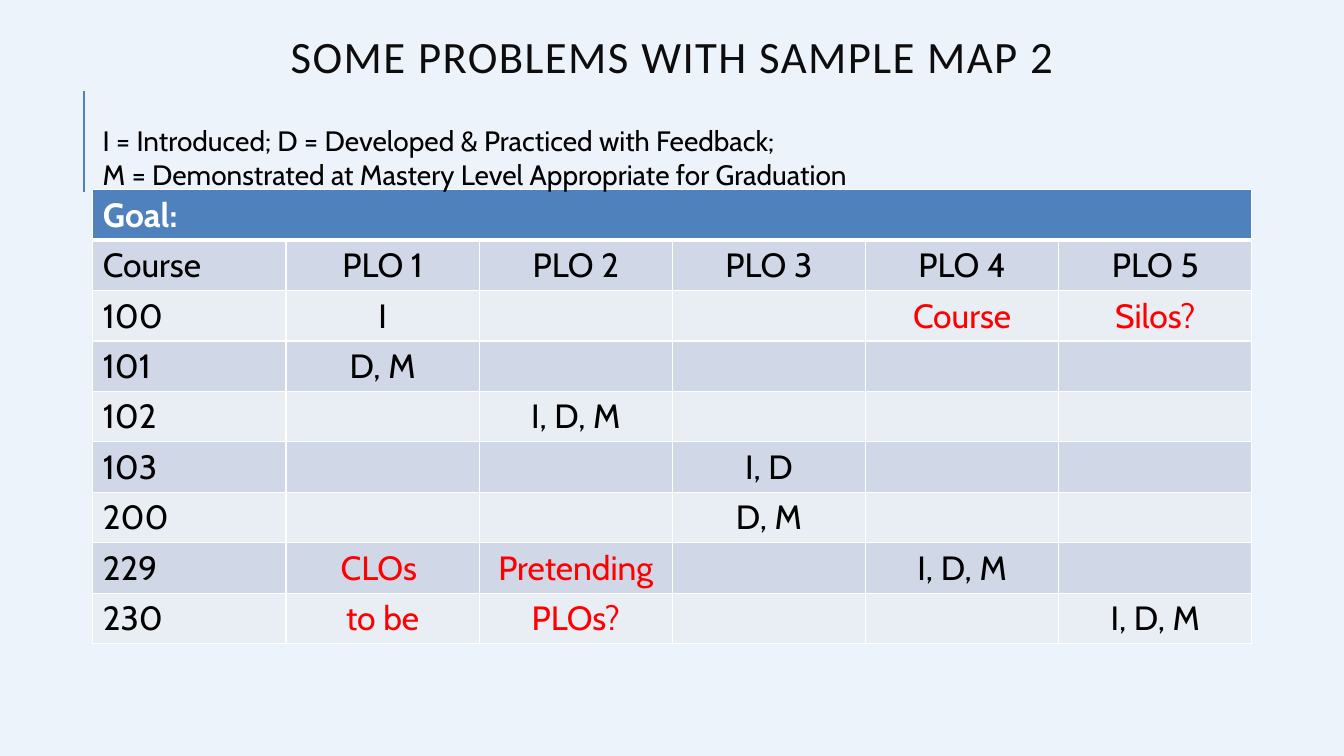
"""Build a slide with a curriculum map that shows sample problems."""
from lxml import etree
from pptx import Presentation
from pptx import util as u
from pptx.dml.color import RGBColor
from pptx.enum import shapes, text
from pptx.oxml import ns

PALE = RGBColor(0xED, 0xF3, 0xFB)
BLUE = RGBColor(0x4F, 0x81, 0xBD)
BAND = RGBColor(0xD0, 0xD8, 0xE8)
LIGHT = RGBColor(0xE9, 0xED, 0xF4)
WHITE = RGBColor(0xFF, 0xFF, 0xFF)
BLACK = RGBColor(0x00, 0x00, 0x00)
INK = RGBColor(0x0D, 0x0D, 0x0D)
RED = RGBColor(0xFF, 0x00, 0x00)

LEFT, WIDTH = 2.34, 29.21
NOTES = {"Course", "Silos?", "CLOs ", "Pretending", "to be", "PLOs?"}
ROWS = [
    ["Goal:", "", "", "", "", ""],
    ["Course", "PLO 1", "PLO 2", "PLO 3", "PLO 4", "PLO 5"],
    ["100", "I", "", "", "Course", "Silos?"],
    ["101", "D, M", "", "", "", ""],
    ["102", "", "I, D, M", "", "", ""],
    ["103", "", "", "I, D", "", ""],
    ["200", "", "", "D, M", "", ""],
    ["229", "CLOs ", "Pretending", "", "I, D, M", ""],
    ["230", "to be", "PLOs?", "", "", "I, D, M"],
]


class Deck:
    """Hold the style and the current slide."""

    def __init__(self):
        self.prs = Presentation()
        self.prs.slide_width = u.Cm(33.87)
        self.prs.slide_height = u.Cm(19.05)
        self.slide = self.prs.slides.add_slide(self.prs.slide_layouts[6])
        fill = self.slide.background.fill
        fill.solid()
        fill.fore_color.rgb = PALE

    def style(self, para, size, color, face="Cabin", bold=False, gap=0):
        for run in para.runs:
            run.font.size = u.Pt(size)
            run.font.name = face
            run.font.bold = bold
            run.font.color.rgb = color
            if gap:
                run.font._element.set("spc", str(gap))

    def label(self, words, top, height, size, color, **look):
        box = self.slide.shapes.add_textbox(
            u.Cm(LEFT), u.Cm(top), u.Cm(WIDTH), u.Cm(height))
        frame = box.text_frame
        frame.word_wrap = True
        para = frame.paragraphs[0]
        para.text = words
        self.style(para, size, color, **look)
        return frame

    def line(self, x, top, end):
        rule = self.slide.shapes.add_connector(
            shapes.MSO_CONNECTOR.STRAIGHT,
            u.Cm(x), u.Cm(end), u.Cm(x), u.Cm(top))
        rule.line.color.rgb = BLUE
        rule.line.width = u.Pt(1.5)
        etree.SubElement(rule._element.spPr, ns.qn("a:effectLst"))

    def edge(self, cell, row):
        props = cell._tc.get_or_add_tcPr()
        wide = {0: "lnB", 1: "lnT"}.get(row)
        for spot, side in enumerate(("lnL", "lnR", "lnT", "lnB")):
            line = etree.Element(ns.qn("a:" + side))
            line.set("w", str(u.Pt(3 if side == wide else 1)))
            fill = etree.SubElement(line, ns.qn("a:solidFill"))
            etree.SubElement(fill, ns.qn("a:srgbClr")).set("val", str(WHITE))
            props.insert(spot, line)

    def cell(self, cell, words, row, col):
        head = row == 0
        cell.fill.solid()
        cell.fill.fore_color.rgb = BLUE if head else (LIGHT, BAND)[row % 2]
        self.edge(cell, row)
        if words:
            cell.text_frame.text = words
            para = cell.text_frame.paragraphs[0]
            note = col > 0 and words in NOTES
            color = WHITE if head else RED if note else BLACK
            self.style(para, 24, color, bold=head)
            if col:
                para.alignment = text.PP_ALIGN.CENTER

    def table(self, rows, top, step):
        count = len(rows[0])
        grid = self.slide.shapes.add_table(
            len(rows), count, u.Cm(LEFT), u.Cm(top),
            u.Cm(WIDTH), u.Cm(step * len(rows))).table
        for r, row in enumerate(rows):
            for c, words in enumerate(row):
                self.cell(grid.cell(r, c), words, r, c)
        grid.cell(0, 0).merge(grid.cell(0, count - 1))


def main():
    deck = Deck()
    deck.line(2.11, 2.29, 4.83)
    title = deck.label("SOME PROBLEMS WITH SAMPLE MAP 2", 0.08, 2.92, 32, INK,
                       face="Calibri", gap=100)
    title.vertical_anchor = text.MSO_ANCHOR.MIDDLE
    title.paragraphs[0].alignment = text.PP_ALIGN.CENTER
    title.paragraphs[0].line_spacing = 0.8
    deck.table(ROWS, 4.78, 1.27)
    deck.label("I = Introduced; D = Developed & Practiced with Feedback;\v"
               "M = Demonstrated at Mastery Level Appropriate for Graduation",
               3, 1.96, 20, BLACK)
    deck.prs.save("out.pptx")


if __name__ == "__main__":
    main()
